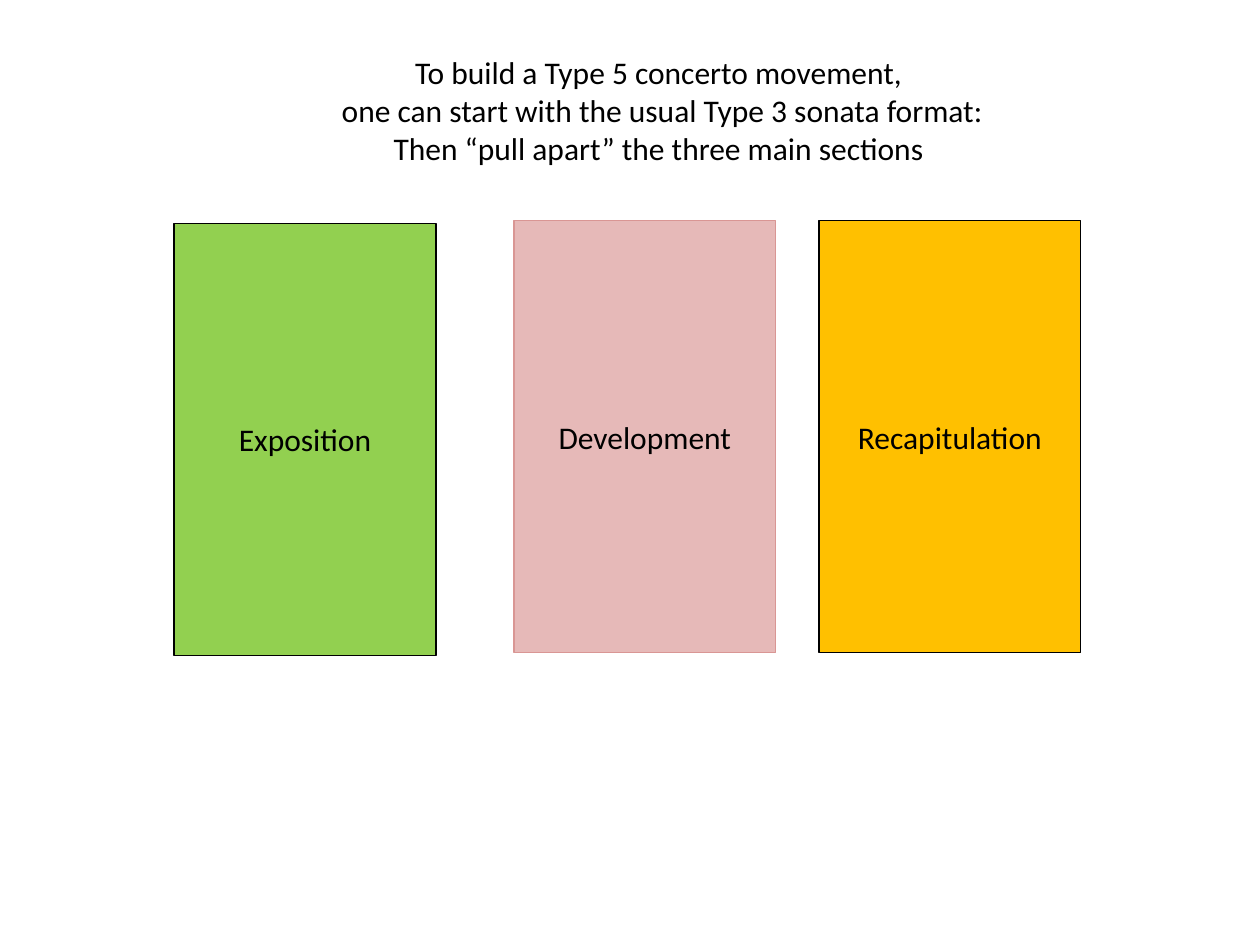
from pptx import Presentation
from pptx.dml.color import RGBColor
from pptx.enum.shapes import MSO_SHAPE
from pptx.enum.text import MSO_ANCHOR, MSO_AUTO_SIZE, PP_ALIGN
from pptx.util import Cm, Pt

BLACK = RGBColor(0x00, 0x00, 0x00)
GREEN = RGBColor(0x92, 0xD0, 0x50)
PINK = RGBColor(0xE6, 0xB9, 0xB8)
ROSE = RGBColor(0xD9, 0x96, 0x94)
GOLD = RGBColor(0xFF, 0xC0, 0x00)

FONT = {"name": "Calibri", "size": Pt(18)}
TITLE = {"left": Cm(6.15), "top": Cm(0.94), "width": Cm(14.4), "height": Cm(2.57)}
LINES = [
    "To build a Type 5 concerto movement, ",
    "one can start with the usual Type 3 sonata format:",
    "Then “pull apart” the three main sections ",
]
WIDTH, HEIGHT = Cm(5.28), Cm(8.71)
PARTS = [
    ("Exposition", 3.51, 4.5, GREEN, BLACK),
    ("Development", 10.36, 4.45, PINK, ROSE),
    ("Recapitulation", 16.51, 4.45, GOLD, BLACK),
]


def apply(item, values):
    for name, value in values.items():
        setattr(item, name, value)


def set_text(shape, text, anchor):
    frame = shape.text_frame
    frame.text = text
    apply(frame, {"word_wrap": True, "auto_size": MSO_AUTO_SIZE.NONE,
                  "vertical_anchor": anchor})
    for para in frame.paragraphs:
        para.alignment = PP_ALIGN.CENTER
        for run in para.runs:
            apply(run.font, FONT)
            run.font.color.rgb = BLACK


def add_title(slide):
    title = slide.shapes.title
    apply(title, TITLE)
    set_text(title, "\n".join(LINES), MSO_ANCHOR.TOP)


def add_part(slide, text, left, top, fill, edge):
    box = slide.shapes.add_shape(
        MSO_SHAPE.RECTANGLE, Cm(left), Cm(top), WIDTH, HEIGHT)
    box.shadow.inherit = False
    box.fill.solid()
    box.fill.fore_color.rgb = fill
    box.line.color.rgb = edge
    box.line.width = Pt(0.75)
    set_text(box, text, MSO_ANCHOR.MIDDLE)


def main():
    deck = Presentation()
    apply(deck, {"slide_width": Cm(25.4), "slide_height": Cm(19.05)})
    slide = deck.slides.add_slide(deck.slide_layouts[5])
    add_title(slide)
    for part in PARTS:
        add_part(slide, *part)
    deck.save("out.pptx")


if __name__ == "__main__":
    main()
